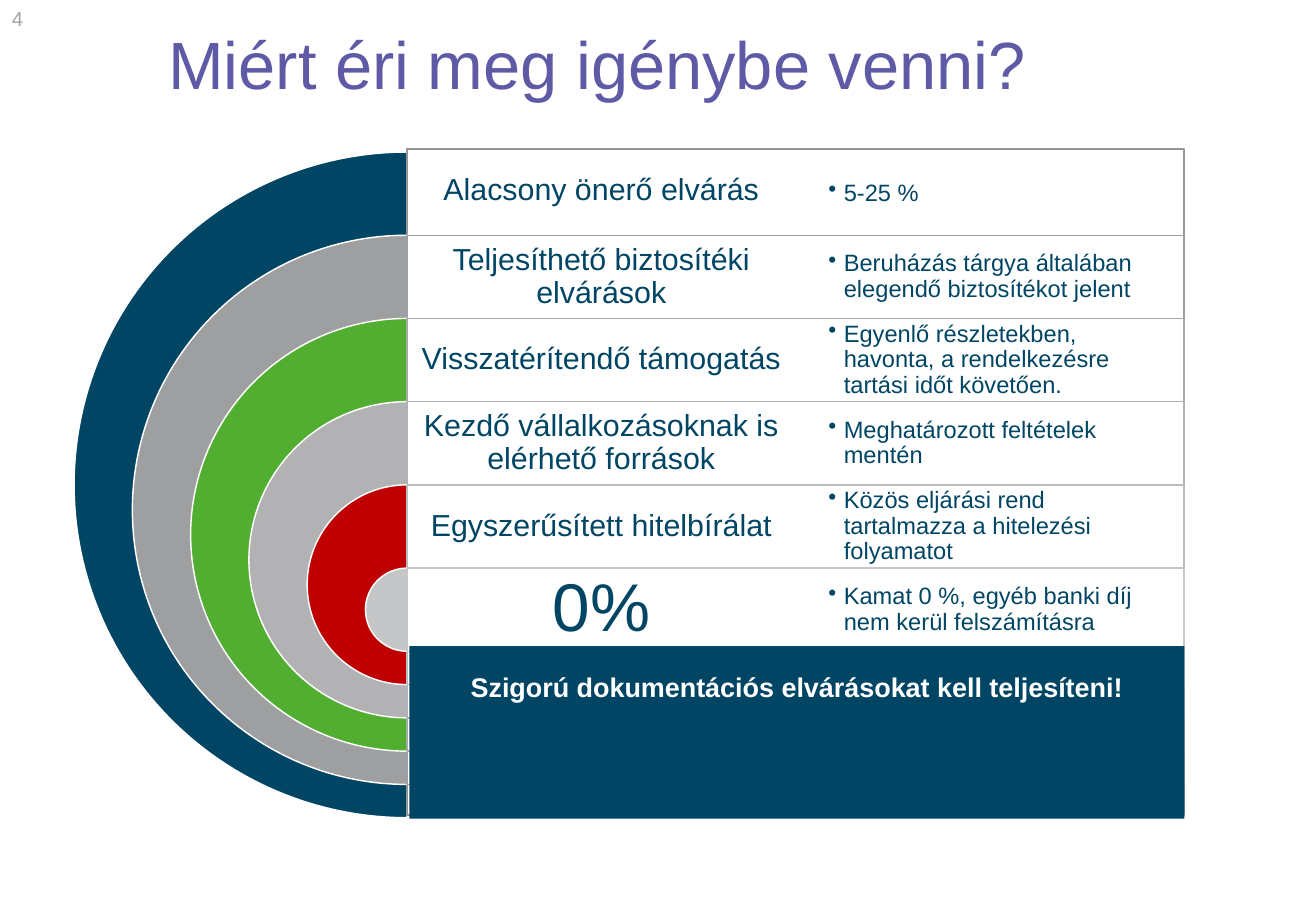
from lxml.etree import SubElement as Sub
from pptx import Presentation as Deck
from pptx.dml.color import RGBColor as Rgb
from pptx.enum.shapes import MSO_SHAPE as Kind
from pptx.enum.text import MSO_ANCHOR as Anchor, PP_ALIGN as Align
from pptx.oxml.ns import qn
from pptx.util import Cm, Pt

HUE = {"title": "5F5AA5", "navy": "004564", "white": "FFFFFF", "page": "A3A4A6"}

# Heading, bullet, ring colour, frame colour
ROWS = [
    ("Alacsony önerő elvárás", "5-25 %", "004564", "949597"),
    ("Teljesíthető biztosítéki elvárások",
     "Beruházás tárgya általában elegendő biztosítékot jelent", "9E9FA0", "9E9FA0"),
    ("Visszatérítendő támogatás",
     "Egyenlő részletekben, havonta, a rendelkezésre tartási időt követően.",
     "52AE31", "A8A8AA"),
    ("Kezdő vállalkozásoknak is elérhető források",
     "Meghatározott feltételek mentén", "B2B2B4", "B2B2B4"),
    ("Egyszerűsített hitelbírálat",
     "Közös eljárási rend tartalmazza a hitelezési folyamatot", "C00000", "BBBCBD"),
    ("0%", "Kamat 0 %, egyéb banki díj nem kerül felszámításra", "C5C6C7", "C5C6C7"),
]
TOP, ROW = 3.18, 1.74      # first row and row height
MID, HALF = 8.51, 8.12     # centre of the rings, column width
WIDE, STEP = 13.92, 2.436  # largest ring and its change per row


def draw(kind, box, fill, line=None):
    shape = slide.shapes.add_shape(kind, *map(Cm, box))
    shape.shadow.inherit = False
    shape.fill.solid()
    shape.fill.fore_color.rgb = Rgb.from_string(fill)
    if line:
        shape.line.color.rgb = Rgb.from_string(line)
        shape.line.width = Pt(0.85)
    else:
        shape.line.fill.background()
    return shape


def write(shape, text, size, hue, pad, align=Align.CENTER, anchor=Anchor.MIDDLE,
          space=1.0, bold=False, dot=False):
    frame = shape.text_frame
    sides = zip(("left", "top", "right", "bottom"), pad)
    look = {"word_wrap": True, "vertical_anchor": anchor}
    look.update({"margin_" + side: Cm(gap) for side, gap in sides})
    for name, value in look.items():
        setattr(frame, name, value)
    para = frame.paragraphs[0]
    para.text = text
    para.alignment, para.line_spacing = align, space
    if dot:
        props = para._p.get_or_add_pPr()
        props.set("marL", str(Cm(0.32)))
        props.set("indent", str(Cm(-0.32)))
        Sub(props, qn("a:buChar"), char="•")
    for name, value in {"name": "Arial", "size": Pt(size), "bold": bold}.items():
        setattr(para.font, name, value)
    para.font.color.rgb = Rgb.from_string(HUE[hue])


deck = Deck()
deck.slide_width, deck.slide_height = Cm(27.51), Cm(19.05)
slide = deck.slides.add_slide(deck.slide_layouts[5])

# Title
title = slide.shapes.title
place = {"left": 0, "top": 0.28, "width": 24.97, "height": 2.06}
for name, value in place.items():
    setattr(title, name, Cm(value))
write(title, "Miért éri meg igénybe venni?", 39.6, "title", [0.25, 0.13] * 2)

# Half rings, frames and headings
for i, (head, note, ring, edge) in enumerate(ROWS):
    top, size = TOP + i * ROW, WIDE - i * STEP
    pie = draw(Kind.PIE, (MID - size / 2, top, size, size), ring, HUE["white"])
    pie.adjustments[0], pie.adjustments[1] = 54, 162
    if i == 0:
        top -= 0.06
    card = draw(Kind.RECTANGLE, (MID, top, 2 * HALF, size), HUE["white"], edge)
    tint = card.fill._xPr.find(qn("a:solidFill"))[0]
    Sub(tint, qn("a:alpha"), val="90000")
    label = slide.shapes.add_textbox(Cm(MID), Cm(top), Cm(HALF), Cm(ROW))
    big = head == "0%"
    write(label, head, 40 if big else 18, "navy", [0.43 if big else 0.18] * 4, space=0.9)

# Bullets
for i, (head, note, ring, edge) in enumerate(ROWS):
    item = slide.shapes.add_textbox(Cm(MID + HALF), Cm(TOP + i * ROW), Cm(HALF), Cm(ROW))
    write(item, note, 14, "navy", [0.69] * 4, Align.LEFT, space=0.9, dot=True)

# Bottom banner
band = draw(Kind.RECTANGLE, (8.56, 13.51, 16.2, 3.61), HUE["navy"])
write(band, "Szigorú dokumentációs elvárásokat kell teljesíteni!", 16, "white",
      (0.51, 0.51, 0.51, 0), anchor=Anchor.TOP, bold=True)

# Page number
page = slide.shapes.add_textbox(0, 0, Cm(1.19), Cm(1.02))
write(page, "4", 12, "page", [0.25, 0.13] * 2, Align.LEFT, Anchor.TOP)

deck.save("out.pptx")
